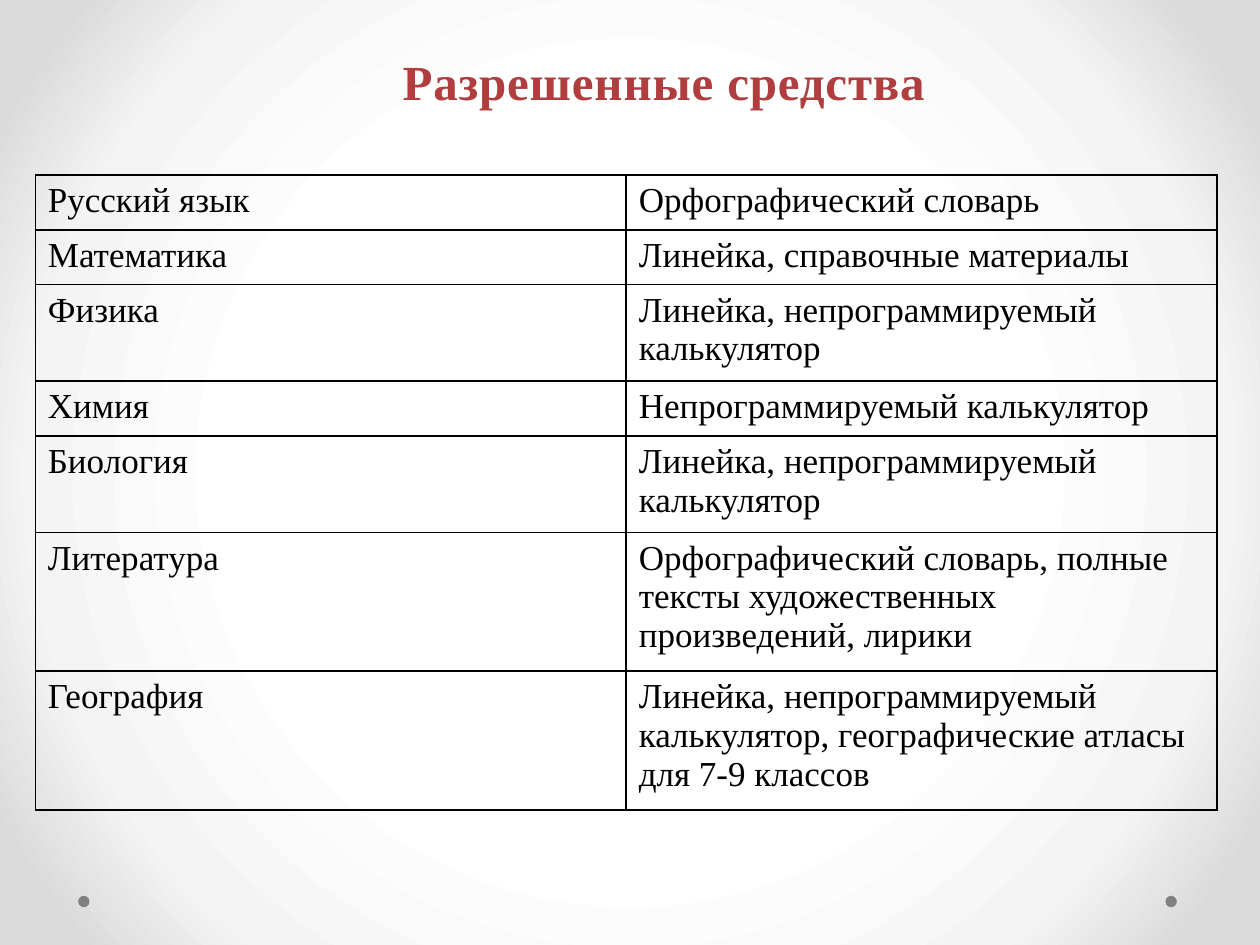
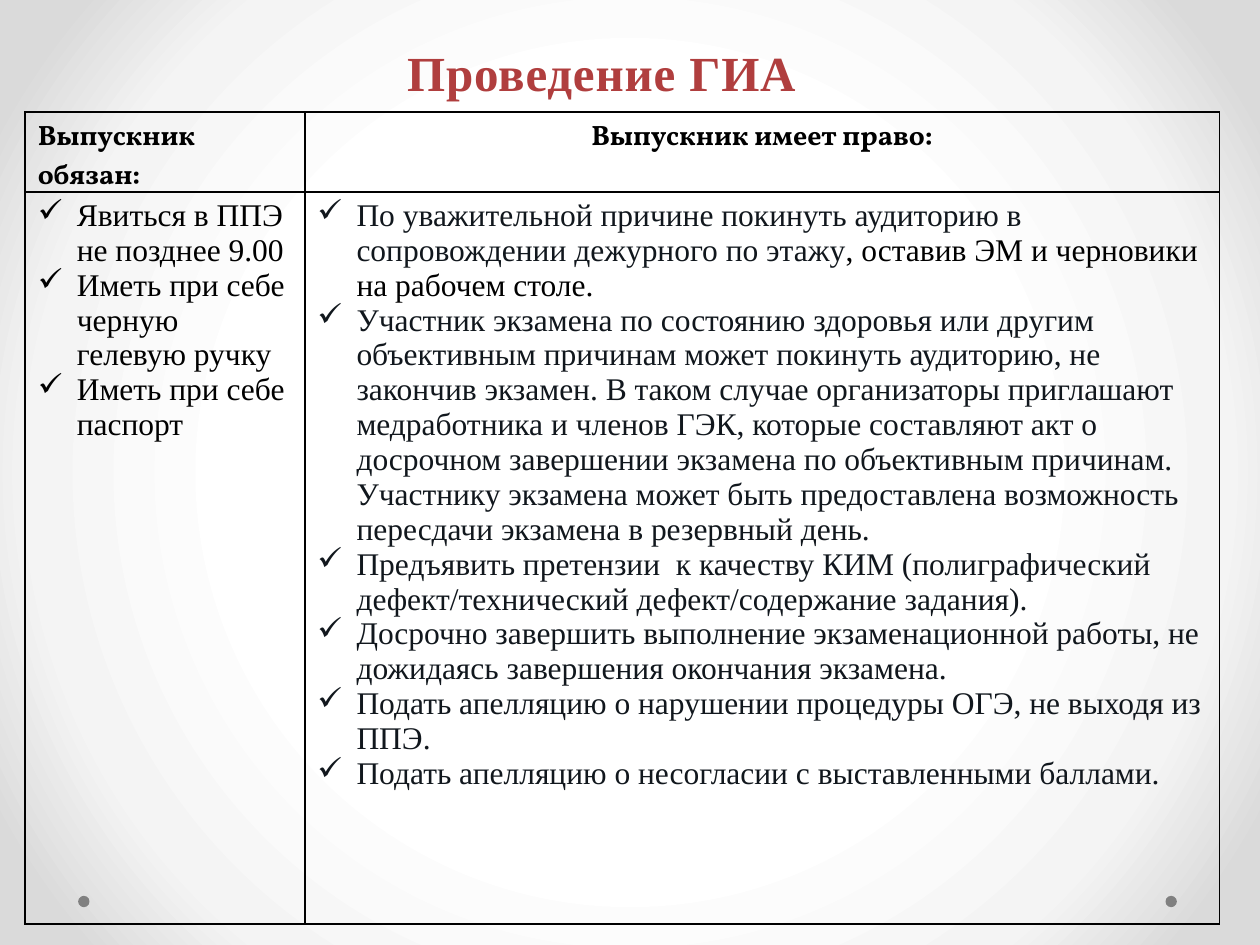
from lxml import etree
from pptx import Presentation
from pptx import util as u
from pptx.dml.color import RGBColor
from pptx.enum import shapes, text
from pptx.oxml import parse_xml
from pptx.oxml.ns import nsdecls, qn

BLACK = RGBColor(0, 0, 0)
INK = RGBColor(0x11, 0x17, 0x1D)
DOT = RGBColor(0x80, 0x80, 0x80)
TITLE_STOPS = [(0.25, RGBColor(0xB0, 0x3E, 0x3E)), (1, RGBColor(0x7F, 0x29, 0x29))]
BACKDROP_STOPS = [
    (50, RGBColor(0xFF, 0xFF, 0xFF)),
    (76, RGBColor(0xF4, 0xF4, 0xF4)),
    (92, RGBColor(0xDA, 0xDA, 0xDA)),
]

SERIF = "Times New Roman"
TITLE = {"name": SERIF, "size": u.Pt(28), "bold": True}
SUBJECT = {"name": SERIF, "size": u.Pt(20), "bold": False}
HEADING = {"name": "Vollkorn", "size": u.Pt(16), "bold": True}
ITEM = {"name": SERIF, "size": u.Pt(18), "bold": False}

ALLOWED = [
    ("Русский язык", "Орфографический словарь"),
    ("Математика", "Линейка, справочные материалы"),
    ("Физика", "Линейка, непрограммируемый калькулятор"),
    ("Химия", "Непрограммируемый калькулятор"),
    ("Биология", "Линейка, непрограммируемый калькулятор"),
    ("Литература", "Орфографический словарь, полные тексты художественных произведений, лирики"),
    ("География", "Линейка, непрограммируемый калькулятор, географические атласы для 7-9 классов"),
]

DUTIES = [
    "Явиться в ППЭ не позднее 9.00",
    "Иметь при себе черную гелевую ручку",
    "Иметь при себе паспорт",
]

LEAVE_ROOM = [
    ("По уважительной причине покинуть аудиторию в сопровождении дежурного по этажу", INK),
    (", оставив ЭМ и черновики на рабочем столе.", BLACK),
]

RIGHTS = [
    "Участник экзамена по состоянию здоровья или другим объективным причинам может "
    "покинуть аудиторию, не закончив экзамен. В таком случае организаторы приглашают "
    "медработника и членов ГЭК, которые составляют акт о досрочном завершении экзамена "
    "по объективным причинам.  Участнику экзамена может быть предоставлена возможность "
    "пересдачи экзамена в резервный день.",
    "Предъявить претензии  к качеству КИМ (полиграфический дефект/технический "
    "дефект/содержание задания).",
    "Досрочно завершить выполнение экзаменационной работы, не дожидаясь завершения "
    "окончания экзамена.",
    "Подать апелляцию о нарушении процедуры ОГЭ, не выходя из ППЭ.",
    "Подать апелляцию о несогласии с выставленными баллами.",
]


class Deck:
    def __init__(self):
        self.prs = Presentation()
        self.prs.slide_width = u.Inches(10)
        self.prs.slide_height = u.Inches(7.5)
        self.s = None

    def slide(self):
        self.s = self.prs.slides.add_slide(self.prs.slide_layouts[6])
        self.backdrop()
        for left in (9.25, 0.62):
            self.dot(left, 7.11, 0.09)

    def backdrop(self):
        fill = self.s.background.fill
        fill.gradient()
        old = self.s.element.find(".//" + qn("a:gradFill"))
        stops = "".join(
            f'<a:gs pos="{pos * 1000}"><a:srgbClr val="{color}"/></a:gs>'
            for pos, color in BACKDROP_STOPS
        )
        grad = parse_xml(
            f'<a:gradFill {nsdecls("a")} rotWithShape="1"><a:gsLst>{stops}</a:gsLst>'
            '<a:path path="circle"><a:fillToRect l="50000" t="50000" r="50000" b="50000"/>'
            "</a:path></a:gradFill>"
        )
        old.getparent().replace(old, grad)

    def dot(self, left, top, size):
        sp = self.s.shapes.add_shape(
            shapes.MSO_SHAPE.OVAL, *map(u.Inches, (left, top, size, size))
        )
        sp.shadow.inherit = False
        sp.fill.solid()
        sp.fill.fore_color.rgb = DOT
        sp.line.fill.background()

    def run(self, p, words, style, color=None):
        r = p.add_run()
        r.text = words
        for key, value in style.items():
            setattr(r.font, key, value)
        if color is not None:
            r.font.color.rgb = color
        return r

    def title(self, words, left, top, width, wrap=True):
        sp = self.s.shapes.add_textbox(*map(u.Inches, (left, top, width, 0.57)))
        tf = sp.text_frame
        tf.word_wrap = wrap
        tf.auto_size = text.MSO_AUTO_SIZE.SHAPE_TO_FIT_TEXT
        p = tf.paragraphs[0]
        p.alignment = text.PP_ALIGN.CENTER
        r = self.run(p, words, TITLE)
        r.font.fill.gradient()
        r.font.fill.gradient_angle = 270
        for stop, (pos, color) in zip(r.font.fill.gradient_stops, TITLE_STOPS):
            stop.position = pos
            stop.color.rgb = color
        r.font._element.set("spc", "50")

    def table(self, left, top, cols, rows):
        frame = self.s.shapes.add_table(
            len(rows), len(cols), *map(u.Inches, (left, top, sum(cols), sum(rows)))
        )
        table = frame.table
        table.first_row = table.horz_banding = False
        for col, width in zip(table.columns, cols):
            col.width = u.Inches(width)
        for row, height in zip(table.rows, rows):
            row.height = u.Inches(height)
        for cell in table.iter_cells():
            self.border(cell)
            cell.fill.background()
        return table

    def border(self, cell):
        tcPr = cell._tc.get_or_add_tcPr()
        for side in ("lnL", "lnR", "lnT", "lnB"):
            ln = etree.SubElement(tcPr, qn(f"a:{side}"), w=str(u.Pt(1)))
            fill = etree.SubElement(ln, qn("a:solidFill"))
            etree.SubElement(fill, qn("a:srgbClr"), val=str(BLACK))

    def cell(self, cell, words, style, align=None):
        p = cell.text_frame.paragraphs[0]
        p.alignment = align
        self.run(p, words, style, BLACK)

    def checklist(self, cell, items):
        tf = cell.text_frame
        for i, runs in enumerate(items):
            p = tf.add_paragraph() if i else tf.paragraphs[0]
            pPr = p._p.get_or_add_pPr()
            indent = u.Inches(0.31)
            pPr.set("marL", str(indent))
            pPr.set("indent", str(-indent))
            etree.SubElement(pPr, qn("a:buChar"), char="✓")
            for words, color in runs:
                self.run(p, words, ITEM, color)


def allowed_slide(deck):
    deck.slide()
    deck.title("Разрешенные средства", 2.24, 0.36, 6.06)
    table = deck.table(0.28, 1.39, [4.69] * 2, [0.41] * len(ALLOWED))
    for row, pair in zip(table.rows, ALLOWED):
        for cell, words in zip(row.cells, pair):
            deck.cell(cell, words, SUBJECT)


def exam_slide(deck):
    deck.slide()
    deck.title("Проведение ГИА", 3.11, 0.29, 3.33, wrap=False)
    table = deck.table(0.2, 0.89, [2.22, 7.26], [0.39, 5.81])
    deck.cell(table.cell(0, 0), "Выпускник обязан:", HEADING)
    deck.cell(table.cell(0, 1), "Выпускник имеет право:", HEADING, text.PP_ALIGN.CENTER)
    deck.checklist(table.cell(1, 0), [[(words, BLACK)] for words in DUTIES])
    deck.checklist(table.cell(1, 1), [LEAVE_ROOM] + [[(words, INK)] for words in RIGHTS])


def main():
    deck = Deck()
    allowed_slide(deck)
    exam_slide(deck)
    deck.prs.save("out.pptx")


if __name__ == "__main__":
    main()
